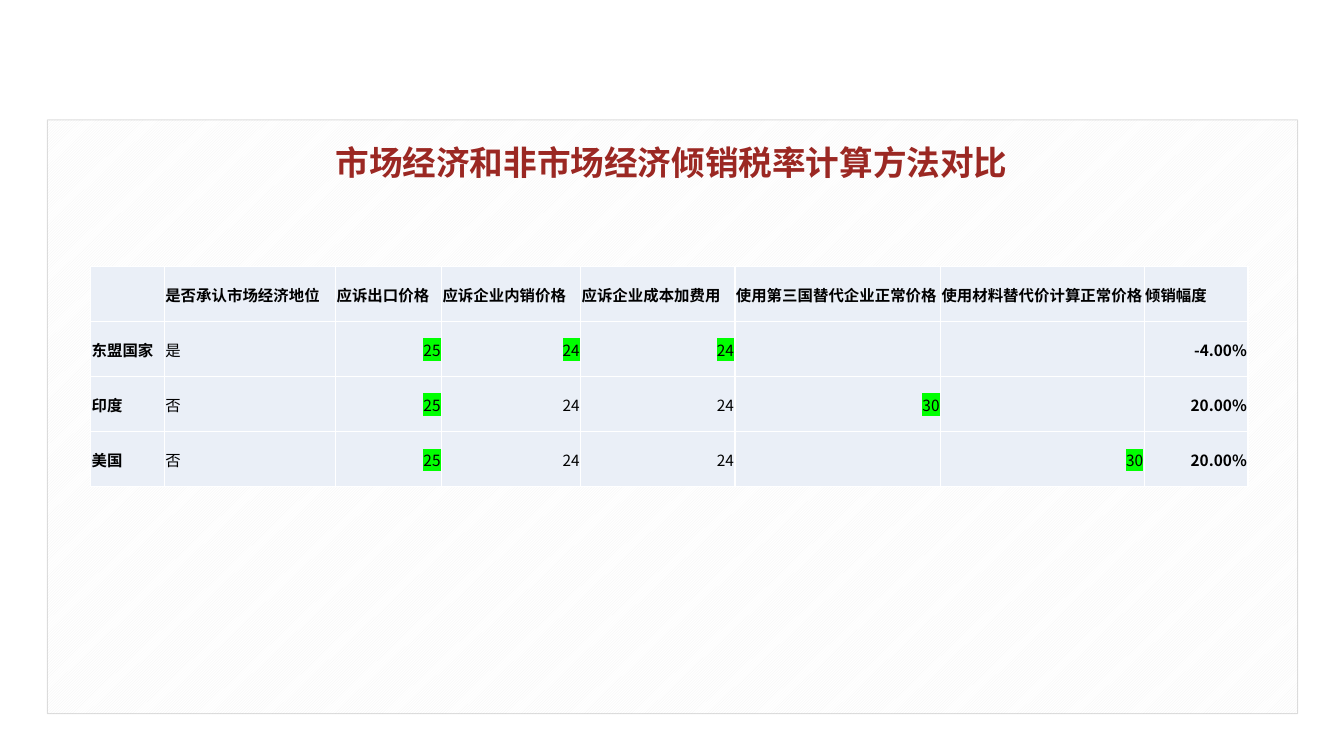
from dataclasses import dataclass

from lxml.etree import SubElement
from pptx import Presentation
from pptx.dml.color import RGBColor
from pptx.enum.dml import MSO_PATTERN
from pptx.enum.shapes import MSO_SHAPE
from pptx.enum.text import MSO_ANCHOR, PP_ALIGN
from pptx.oxml.ns import qn
from pptx.slide import Slide
from pptx.table import Table, _Cell as Cell
from pptx.text.text import _Paragraph as Paragraph
from pptx.util import Inches, Pt

SLIDE_WIDTH, SLIDE_HEIGHT = Inches(13.33), Inches(7.5)
FONT = "Noto Sans CJK SC"
WHITE = RGBColor(0xFF, 0xFF, 0xFF)
BLACK = RGBColor(0x00, 0x00, 0x00)
STRIPE = RGBColor(0xF2, 0xF2, 0xF2)
PANEL_LINE = RGBColor(0x59, 0x59, 0x59)
CELL_FILL = RGBColor(0xEA, 0xEF, 0xF7)
TITLE_RED = RGBColor(0x9B, 0x28, 0x23)
HIGHLIGHT = RGBColor(0x00, 0xFF, 0x00)


@dataclass(frozen=True)
class Area:
    """A rectangle on a grid of 100 columns by 100 rows."""
    column: float
    row: float
    columns: float
    rows: float

    def box(self) -> tuple[int, int, int, int]:
        return (across(self.column), down(self.row),
                across(self.columns), down(self.rows))


@dataclass(frozen=True)
class Country:
    name: str
    market_economy: str
    prices: tuple[str, ...]
    used_prices: tuple[int, ...]
    margin: str


PANEL = Area(3.53, 15.87, 93.02, 78.53)
TITLE = Area(17.03, 17.73, 65.87, 8)
COLUMN_WIDTHS = (5.48, 12.75, 7.88, 10.35, 11.48, 15.3, 15.15, 7.73)
ROW_HEIGHT = 7.3
HEADERS = ("", "是否承认市场经济地位", "应诉出口价格", "应诉企业内销价格",
           "应诉企业成本加费用", "使用第三国替代企业正常价格",
           "使用材料替代价计算正常价格", "倾销幅度")
COUNTRIES = (
    Country("东盟国家", "是", ("25", "24", "24", "", ""), (0, 1, 2), "-4.00%"),
    Country("印度", "否", ("25", "24", "24", "30", ""), (0, 3), "20.00%"),
    Country("美国", "否", ("25", "24", "24", "", "30"), (0, 4), "20.00%"),
)
TABLE = Area(6.75, 35.2, sum(COLUMN_WIDTHS), ROW_HEIGHT * (len(COUNTRIES) + 1))


def across(columns: float) -> int:
    return round(SLIDE_WIDTH * columns / 100)


def down(rows: float) -> int:
    return round(SLIDE_HEIGHT * rows / 100)


def format_runs(paragraph: Paragraph, size: float, color: RGBColor,
                bold: bool, highlighted: bool = False) -> None:
    for run in paragraph.runs:
        run.font.size = Pt(size)
        run.font.bold = bold
        run.font.color.rgb = color
        properties = run.font._element
        if highlighted:
            highlight = SubElement(properties, qn("a:highlight"))
            SubElement(highlight, qn("a:srgbClr"), val=str(HIGHLIGHT))
        run.font.name = FONT
        SubElement(properties, qn("a:ea"), typeface=FONT)


def add_panel(slide: Slide) -> None:
    panel = slide.shapes.add_shape(MSO_SHAPE.RECTANGLE, *PANEL.box())
    panel.shadow.inherit = False
    panel.fill.patterned()
    panel.fill.pattern = MSO_PATTERN.LIGHT_UPWARD_DIAGONAL
    panel.fill.fore_color.rgb = STRIPE
    panel.fill.back_color.rgb = WHITE
    panel.line.width = Pt(0.75)
    panel.line.color.rgb = PANEL_LINE
    line_color = panel.line._ln.find(f".//{qn('a:srgbClr')}")
    SubElement(line_color, qn("a:alpha"), val="20000")


def add_title(slide: Slide) -> None:
    text_frame = slide.shapes.add_textbox(*TITLE.box()).text_frame
    text_frame.word_wrap = True
    text_frame.vertical_anchor = MSO_ANCHOR.MIDDLE
    text_frame.text = "市场经济和非市场经济倾销税率计算方法对比"
    paragraph = text_frame.paragraphs[0]
    paragraph.alignment = PP_ALIGN.CENTER
    paragraph.line_spacing = 0.9
    format_runs(paragraph, 24, TITLE_RED, bold=True)


def style_cell(cell: Cell) -> None:
    """Give the cell its white borders, fill and narrow margins."""
    properties = cell._tc.get_or_add_tcPr()
    for side in ("lnL", "lnR", "lnT", "lnB"):
        border = SubElement(properties, qn(f"a:{side}"), w=str(Pt(1)))
        fill = SubElement(border, qn("a:solidFill"))
        SubElement(fill, qn("a:srgbClr"), val=str(WHITE))
    cell.fill.solid()
    cell.fill.fore_color.rgb = CELL_FILL
    cell.vertical_anchor = MSO_ANCHOR.MIDDLE
    cell.margin_left = cell.margin_right = cell.margin_top = Inches(0.01)
    cell.margin_bottom = 0


def fill_cell(cell: Cell, text: str, bold: bool = False,
              right: bool = False, highlighted: bool = False) -> None:
    style_cell(cell)
    cell.text_frame.text = text
    paragraph = cell.text_frame.paragraphs[0]
    paragraph.alignment = PP_ALIGN.RIGHT if right else PP_ALIGN.LEFT
    format_runs(paragraph, 11, BLACK, bold, highlighted)


def fill_country(table: Table, row: int, country: Country) -> None:
    fill_cell(table.cell(row, 0), country.name, bold=True)
    fill_cell(table.cell(row, 1), country.market_economy)
    for index, price in enumerate(country.prices):
        fill_cell(table.cell(row, index + 2), price, right=True,
                  highlighted=index in country.used_prices)
    fill_cell(table.cell(row, len(HEADERS) - 1), country.margin,
              bold=True, right=True)


def add_comparison_table(slide: Slide) -> None:
    table = slide.shapes.add_table(
        len(COUNTRIES) + 1, len(HEADERS), *TABLE.box()).table
    table.first_row = table.horz_banding = False
    for column, width in zip(table.columns, COLUMN_WIDTHS):
        column.width = across(width)
    for row in table.rows:
        row.height = down(ROW_HEIGHT)
    for index, header in enumerate(HEADERS):
        fill_cell(table.cell(0, index), header, bold=True)
    for row, country in enumerate(COUNTRIES, start=1):
        fill_country(table, row, country)


def main() -> None:
    presentation = Presentation()
    presentation.slide_width = SLIDE_WIDTH
    presentation.slide_height = SLIDE_HEIGHT
    slide = presentation.slides.add_slide(presentation.slide_layouts[6])
    add_panel(slide)
    add_comparison_table(slide)
    add_title(slide)
    presentation.save("out.pptx")


if __name__ == "__main__":
    main()
